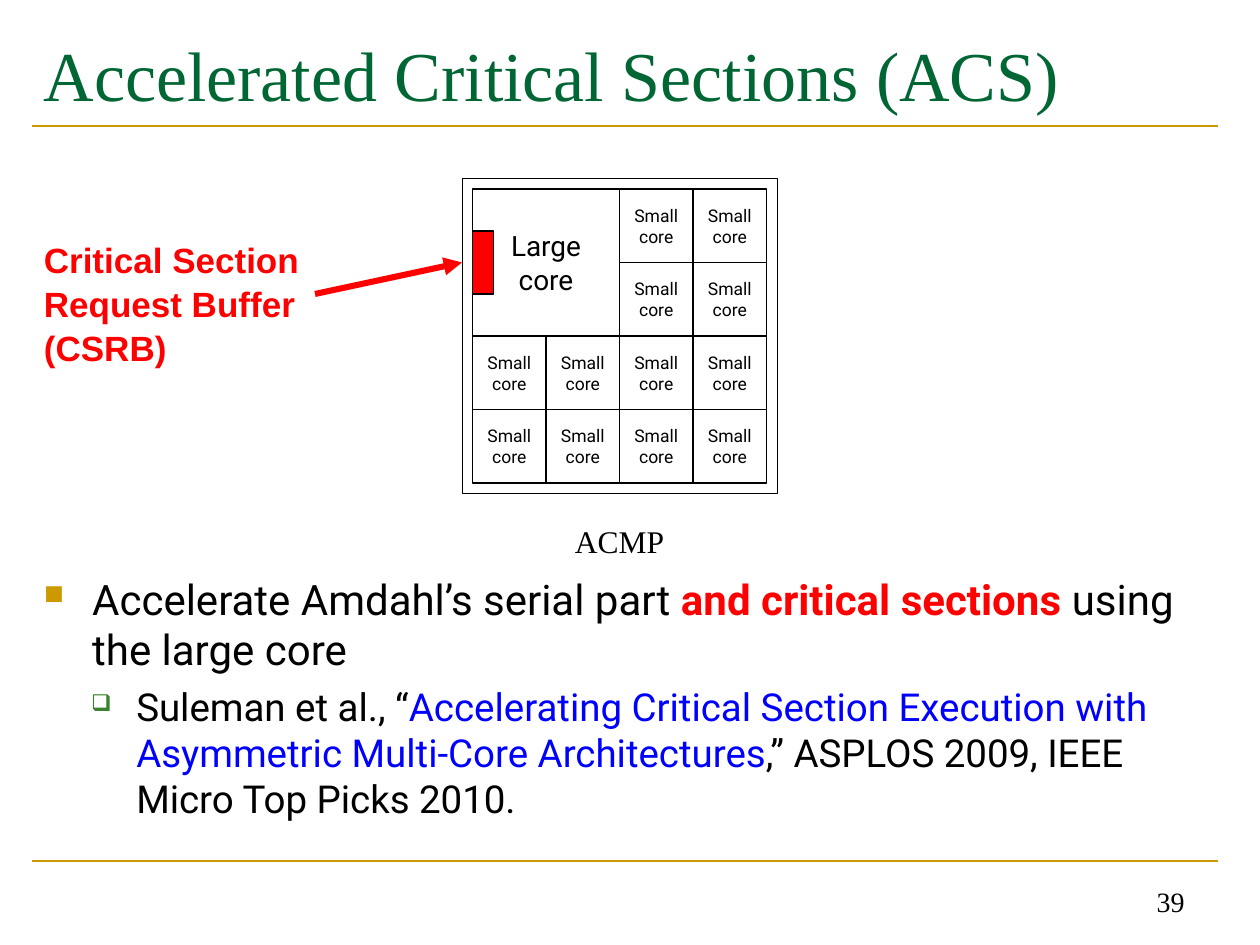
"""Build the Accelerated Critical Sections slide with its chip diagram."""
import pptx
import pptx.dml.color
import pptx.enum.shapes
import pptx.enum.text
import pptx.oxml.ns
import pptx.util
from lxml import etree

PX = 7620
COLORS = {
    "white": "FFFFFF", "black": "000000", "red": "FF0000", "blue": "0000FF",
    "green": "006633", "gold": "CC9900", "bullet": "3B812F",
}
SERIF, SANS, LABEL = "Times New Roman", "Roboto", "Arial"
ALIGN = pptx.enum.text.PP_ALIGN
ANCHOR = pptx.enum.text.MSO_ANCHOR

TITLE = "Accelerated Critical Sections (ACS)"
PAGE_NUMBER = "39"
BUFFER_LABEL = ["Critical Section", "Request Buffer (CSRB)"]
CHIP_LABEL = "ACMP"
SMALL_CORE = ["Small", "core"]
LARGE_CORE = ["Large", "core"]
BULLETS = [
    {"size": 24, "margin": 46, "hang": 46, "before": 0,
     "bullet": ("■", "gold", 65),
     "runs": [("Accelerate Amdahl’s serial part ", "black", False),
              ("and critical sections ", "red", True),
              ("using the large core", "black", False)]},
    {"size": 22, "margin": 88, "hang": 43, "before": 5,
     "bullet": ("❑", "bullet", 60),
     "runs": [("Suleman et al., “", "black", False),
              ("Accelerating Critical Section Execution with "
               "Asymmetric Multi-Core Architectures", "blue", False),
              (",” ASPLOS 2009, IEEE Micro Top Picks 2010.", "black", False)]},
]
RULES = [120, 820]
CHIP = (440, 170, 300, 300)
GRID_LEFT, GRID_TOP, CELL, GRID_SIZE, LARGE_SPAN = 450, 180, 70, 4, 2
BUFFER = (450, 220, 20, 60)


def rgb(name):
    return pptx.dml.color.RGBColor.from_string(COLORS[name])


def add_run(paragraph, text, font, size, color="black", bold=False):
    run = paragraph.add_run()
    run.text = text
    run.font.name = font
    run.font.size = pptx.util.Pt(size)
    run.font.bold = bold
    run.font.color.rgb = rgb(color)


def add_lines(shape, lines, font, size, color="black", bold=False,
              align=ALIGN.LEFT, anchor=ANCHOR.TOP, wrap=True):
    frame = shape.text_frame
    frame.word_wrap = wrap
    frame.vertical_anchor = anchor
    paragraph = frame.paragraphs[0]
    paragraph.alignment = align
    for index, line in enumerate(lines):
        if index:
            paragraph.add_line_break()
        add_run(paragraph, line, font, size, color, bold)
    return paragraph


def add_textbox(slide, box):
    return slide.shapes.add_textbox(*(value * PX for value in box))


def add_rectangle(slide, box, fill=None, line_width=0.75):
    rectangle = pptx.enum.shapes.MSO_SHAPE.RECTANGLE
    shape = slide.shapes.add_shape(rectangle, *(value * PX for value in box))
    shape.shadow.inherit = False
    if fill:
        shape.fill.solid()
        shape.fill.fore_color.rgb = rgb(fill)
    else:
        shape.fill.background()
    shape.line.color.rgb = rgb("black")
    shape.line.width = pptx.util.Pt(line_width)
    return shape


def add_line(slide, ends, color, width, arrow=False):
    straight = pptx.enum.shapes.MSO_CONNECTOR.STRAIGHT
    line = slide.shapes.add_connector(straight, *(value * PX for value in ends))
    line.line.color.rgb = rgb(color)
    line.line.width = pptx.util.Pt(width)
    if arrow:
        outline = line.line._get_or_add_ln()
        etree.SubElement(outline, pptx.oxml.ns.qn("a:tailEnd"), type="triangle")
    etree.SubElement(line._element.spPr, pptx.oxml.ns.qn("a:effectLst"))


def set_bullet(paragraph, item):
    character, color, percent = item["bullet"]
    properties = paragraph._p.get_or_add_pPr()
    properties.set("marL", str(item["margin"] * PX))
    properties.set("indent", str(-item["hang"] * PX))
    tag = pptx.oxml.ns.qn
    bullet_color = etree.SubElement(properties, tag("a:buClr"))
    etree.SubElement(bullet_color, tag("a:srgbClr"), val=COLORS[color])
    etree.SubElement(properties, tag("a:buSzPct"), val=str(percent * 1000))
    etree.SubElement(properties, tag("a:buChar"), char=character)


def add_bullets(slide):
    frame = add_textbox(slide, (30, 540, 1130, 280)).text_frame
    frame.word_wrap = True
    for index, item in enumerate(BULLETS):
        paragraph = frame.add_paragraph() if index else frame.paragraphs[0]
        paragraph.space_before = pptx.util.Pt(item["before"])
        set_bullet(paragraph, item)
        for text, color, bold in item["runs"]:
            add_run(paragraph, text, SANS, item["size"], color, bold)


def add_core(slide, column, row, span, lines, size):
    box = (GRID_LEFT + column * CELL, GRID_TOP + row * CELL, span * CELL, span * CELL)
    add_lines(add_rectangle(slide, box), lines, SANS, size,
              align=ALIGN.CENTER, anchor=ANCHOR.MIDDLE, wrap=False)


def add_chip(slide):
    add_rectangle(slide, CHIP, line_width=0.25)
    for row in range(GRID_SIZE):
        for column in range(GRID_SIZE):
            if row >= LARGE_SPAN or column >= LARGE_SPAN:
                add_core(slide, column, row, 1, SMALL_CORE, 10)
    add_core(slide, 0, 0, LARGE_SPAN, LARGE_CORE, 16)
    caption = add_textbox(slide, (GRID_LEFT, 491, GRID_SIZE * CELL, 48))
    add_lines(caption, [CHIP_LABEL], SERIF, 18, align=ALIGN.CENTER)


def main():
    presentation = pptx.Presentation()
    presentation.slide_width = 1200 * PX
    presentation.slide_height = 900 * PX
    slide = presentation.slides.add_slide(presentation.slide_layouts[6])
    for y in RULES:
        add_line(slide, (30, y, 1160, y), "gold", 1.5)
    add_lines(add_textbox(slide, (30, 20, 1130, 100)), [TITLE], SERIF, 40,
              "green", anchor=ANCHOR.MIDDLE)
    add_bullets(slide)
    add_lines(add_textbox(slide, (860, 820, 280, 60)), [PAGE_NUMBER], SERIF, 16,
              align=ALIGN.RIGHT, anchor=ANCHOR.BOTTOM)
    add_chip(slide)
    add_line(slide, (300, 280, 440, 250), "red", 3.5, arrow=True)
    label = add_lines(add_textbox(slide, (30, 220, 310, 133)), BUFFER_LABEL,
                      LABEL, 20, "red", bold=True)
    label.line_spacing = 1.04
    add_rectangle(slide, BUFFER, "red")
    presentation.save("out.pptx")


if __name__ == "__main__":
    main()
